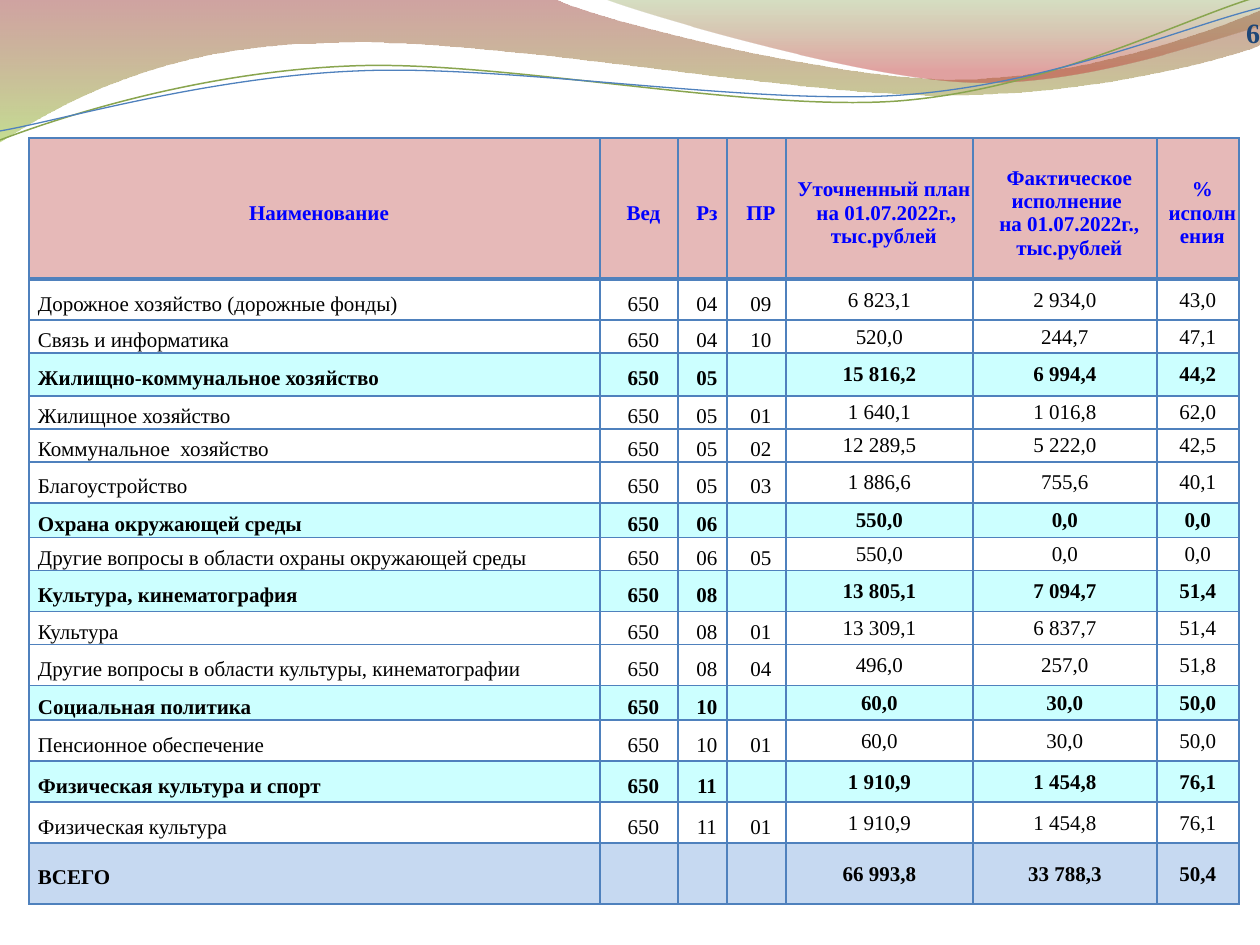
import pptx
import pptx.dml.color
import pptx.enum.text
import pptx.oxml.ns
import pptx.util
from lxml import etree

PIXEL = 914400 / 126
ALIGN = pptx.enum.text.PP_ALIGN
ANCHOR = pptx.enum.text.MSO_ANCHOR
qn = pptx.oxml.ns.qn

COLUMNS = [571, 78, 49, 59, 187, 184, 82]
ROW_HEIGHTS = [141, 41, 33, 43, 33, 33, 41, 33, 33, 41, 33, 41, 33, 41, 41, 41, 61]
HEADER = ["Наименование", "Вед", "Рз", "ПР",
          "Уточненный план\n на 01.07.2022г., тыс.рублей",
          "Фактическое исполнение \nна 01.07.2022г., тыс.рублей",
          "% исполнения"]
BUDGET = [
    ["Дорожное хозяйство (дорожные фонды)", "650", "04", "09", "6 823,1", "2 934,0", "43,0"],
    ["Связь и информатика", "650", "04", "10", "520,0", "244,7", "47,1"],
    ["Жилищно-коммунальное хозяйство", "650", "05", "", "15 816,2", "6 994,4", "44,2"],
    ["Жилищное хозяйство", "650", "05", "01", "1 640,1", "1 016,8", "62,0"],
    ["Коммунальное  хозяйство", "650", "05", "02", "12 289,5", "5 222,0", "42,5"],
    ["Благоустройство", "650", "05", "03", "1 886,6", "755,6", "40,1"],
    ["Охрана окружающей среды", "650", "06", "", "550,0", "0,0", "0,0"],
    ["Другие вопросы в области охраны окружающей среды", "650", "06", "05", "550,0", "0,0", "0,0"],
    ["Культура, кинематография", "650", "08", "", "13 805,1", "7 094,7", "51,4"],
    ["Культура", "650", "08", "01", "13 309,1", "6 837,7", "51,4"],
    ["Другие вопросы в области культуры, кинематографии", "650", "08", "04", "496,0", "257,0", "51,8"],
    ["Социальная политика", "650", "10", "", "60,0", "30,0", "50,0"],
    ["Пенсионное обеспечение", "650", "10", "01", "60,0", "30,0", "50,0"],
    ["Физическая культура и спорт", "650", "11", "", "1 910,9", "1 454,8", "76,1"],
    ["Физическая культура", "650", "11", "01", "1 910,9", "1 454,8", "76,1"],
    ["ВСЕГО", "", "", "", "66 993,8", "33 788,3", "50,4"],
]

LARGE_WAVE = [
    [(554, -1)],
    [(600, 21), (837, 79), (955, 79)],
    [(1075, 79), (1207, 33), (1260, 11)],
    [(1261, 45)],
    [(1239, 55), (1096, 96), (940, 95)],
    [(784, 95), (481, 35), (324, 43)],
    [(163, 45), (58, 105), (-1, 142)],
]
SMALL_WAVE = [
    [(641, 14), (859, 78), (969, 82)],
    [(1079, 87), (1211, 40), (1260, 26)],
    [(1260, 0)],
]
GREEN_CURVE = [
    [(60, 117), (199, 72), (349, 66)],
    [(498, 59), (747, 112), (898, 101)],
    [(1050, 89), (1182, 19), (1257, -3)],
]
BLUE_CURVE = [
    [(59, 121), (207, 77), (357, 71)],
    [(508, 64), (752, 106), (903, 95)],
    [(1053, 84), (1186, 26), (1260, 8)],
]


def px(length):
    return pptx.util.Emu(round(length * PIXEL))


def rgb(color):
    return pptx.dml.color.RGBColor.from_string(color)


def write_text(frame, text, size=12, color="000000", bold=False, align=ALIGN.CENTER,
               font="Times New Roman"):
    frame.word_wrap = True
    for index, line in enumerate(text.split("\n")):
        paragraph = frame.add_paragraph() if index else frame.paragraphs[0]
        paragraph.alignment = align
        if not line:
            etree.SubElement(paragraph._p, qn("a:endParaRPr"), sz=str(size * 100))
            continue
        run = paragraph.add_run()
        run.text = line
        run.font.size = pptx.util.Pt(size)
        run.font.name = font
        run.font.bold = bold
        run.font.color.rgb = rgb(color)


class BudgetSlide:
    border = "4F81BD"
    header_fill = "E6B9B8"
    section_fill = "CCFFFF"
    total_fill = "C6D9F1"
    header_text = "0000FF"

    def __init__(self, presentation):
        self.slide = presentation.slides.add_slide(presentation.slide_layouts[6])

    def outline(self, start, segments, close):
        builder = self.slide.shapes.build_freeform(*start, scale=PIXEL)
        points = [point for segment in segments for point in segment]
        builder.add_line_segments(points, close=close)
        shape = builder.convert_to_shape()
        shape.shadow.inherit = False
        lines = iter(list(shape._element.iter(qn("a:lnTo"))))
        for segment in segments:
            first, *others = [next(lines) for _ in segment]
            if others:
                first.tag = qn("a:cubicBezTo")
            for other in others:
                first.append(other[0])
                other.getparent().remove(other)
        return shape

    def wave(self, start, segments, stops):
        shape = self.outline(start, segments, True)
        shape.line.fill.background()
        shape.fill.gradient()
        shape.fill.gradient_angle = 270
        for stop, (position, color, _) in zip(shape.fill.gradient_stops, stops):
            stop.position = position
            stop.color.rgb = rgb(color)
        gradient = shape._element.spPr.find(qn("a:gradFill"))
        for element, (_, _, opacity) in zip(gradient.iter(qn("a:srgbClr")), stops):
            etree.SubElement(element, qn("a:alpha"), val=str(opacity * 1000))

    def curve(self, start, segments, color, width):
        shape = self.outline(start, segments, False)
        shape.fill.background()
        shape.line.color.rgb = rgb(color)
        shape.line.width = pptx.util.Pt(width)

    def borders(self, cell, top=1, bottom=1):
        properties = cell._tc.get_or_add_tcPr()
        for side, width in (("L", 1), ("R", 1), ("T", top), ("B", bottom)):
            line = etree.SubElement(properties, qn("a:ln" + side), w=str(pptx.util.Pt(width)))
            fill = etree.SubElement(line, qn("a:solidFill"))
            etree.SubElement(fill, qn("a:srgbClr"), val=self.border)

    def table(self, left, top, columns, heights, rows):
        frame = self.slide.shapes.add_table(
            len(rows), len(columns), px(left), px(top), px(sum(columns)), px(sum(heights)))
        table = frame.table
        table.first_row = table.horz_banding = False
        for column, width in zip(table.columns, columns):
            column.width = px(width)
        for row, height in zip(table.rows, heights):
            row.height = px(height)
        for row_index, values in enumerate(rows):
            header = row_index == 0
            summary = not values[3]
            fill = None
            if header:
                fill = self.header_fill
            elif summary:
                fill = self.section_fill if values[1] else self.total_fill
            for column_index, value in enumerate(values):
                cell = table.cell(row_index, column_index)
                amount = column_index > 3 and not header
                cell.margin_left = cell.margin_top = px(1 if amount else 9)
                cell.margin_right = px(1 if amount else 0)
                cell.margin_bottom = 0
                cell.vertical_anchor = ANCHOR.MIDDLE
                self.borders(cell, 2 if row_index == 1 else 1, 2 if header else 1)
                if fill:
                    cell.fill.solid()
                    cell.fill.fore_color.rgb = rgb(fill)
                else:
                    cell.fill.background()
                write_text(cell.text_frame, value, bold=header or summary,
                           color=self.header_text if header else "000000",
                           align=ALIGN.CENTER if header or column_index else ALIGN.JUSTIFY)

    def page_number(self, text, left, top, width, height):
        frame = self.slide.shapes.add_textbox(px(left), px(top), px(width), px(height)).text_frame
        frame.margin_left = frame.margin_top = frame.margin_right = frame.margin_bottom = 0
        frame.vertical_anchor = ANCHOR.BOTTOM
        write_text(frame, text, size=16, color="1E4677", bold=True, align=ALIGN.RIGHT)


def main():
    presentation = pptx.Presentation()
    presentation.slide_width = px(1260)
    presentation.slide_height = px(945)
    budget = BudgetSlide(presentation)
    budget.wave((-1, -1), LARGE_WAVE, [(0, "973330", 45), (1, "95C238", 55)])
    budget.wave((604, -1), SMALL_WAVE, [(0, "769537", 30), (0.8, "BE3330", 45)])
    budget.curve((0, 140), GREEN_CURVE, "89A54F", 0.85)
    budget.curve((0, 131), BLUE_CURVE, "4F81BD", 0.75)
    budget.table(29, 138, COLUMNS, ROW_HEIGHTS, [HEADER] + BUDGET)
    budget.page_number("6", 1157, -1, 103, 50)
    presentation.save("out.pptx")


if __name__ == "__main__":
    main()
